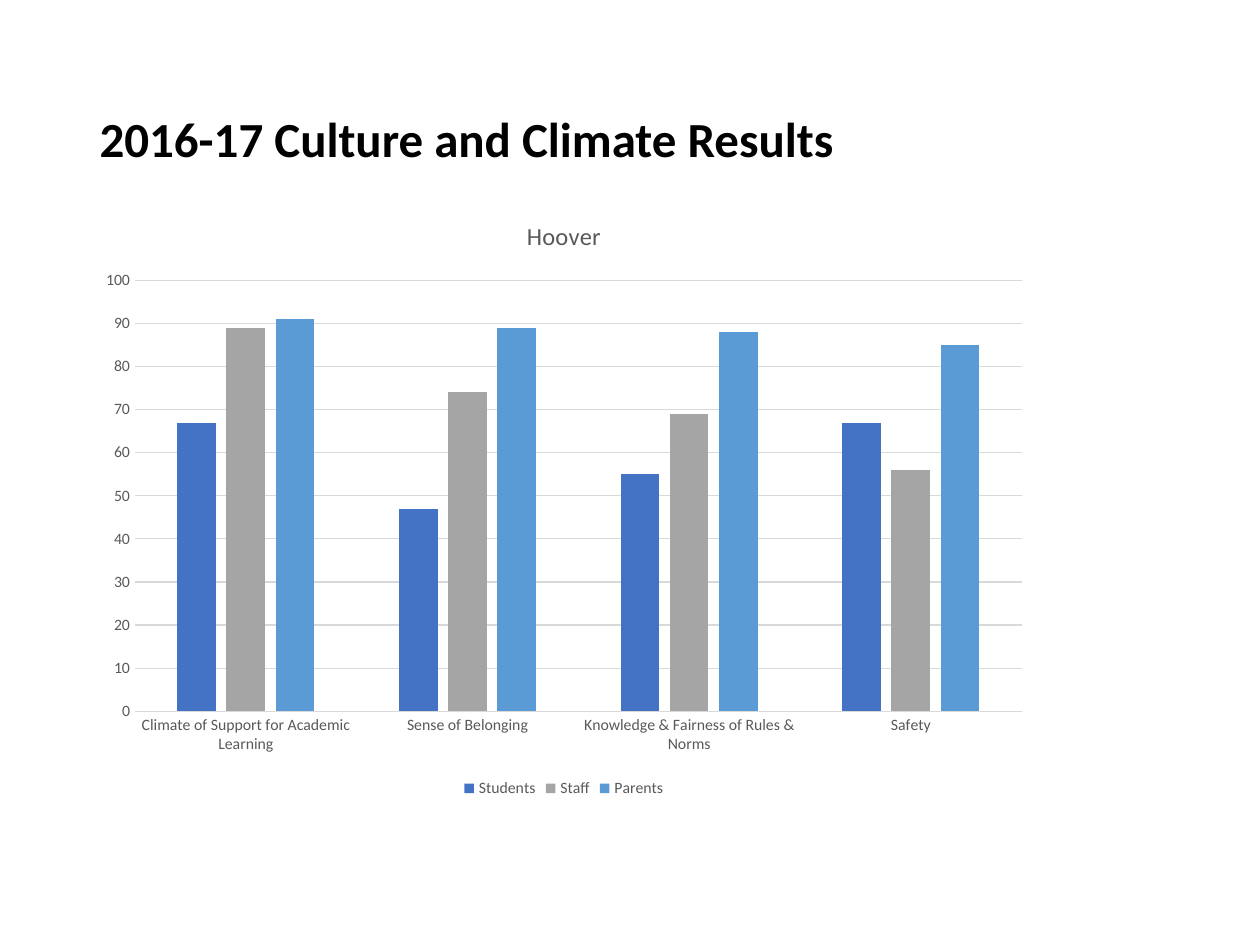
from pptx import Presentation
from pptx.chart.data import CategoryChartData
from pptx.dml.color import RGBColor
from pptx.enum.chart import XL_CHART_TYPE, XL_LEGEND_POSITION, XL_TICK_MARK
from pptx.enum.text import MSO_ANCHOR, PP_ALIGN
from pptx.util import Inches, Pt

FONT = "Calibri"
BLACK = RGBColor(0x00, 0x00, 0x00)
GRAY = RGBColor(0x59, 0x59, 0x59)
RULE = RGBColor(0xD9, 0xD9, 0xD9)

CATEGORIES = [
    "Climate of Support for Academic Learning",
    "Sense of Belonging",
    "Knowledge & Fairness of Rules & Norms",
    "Safety",
]
SERIES = [
    ("Students", (67, 47, 55, 67), RGBColor(0x44, 0x72, 0xC4)),
    ("Staff", (89, 74, 69, 56), RGBColor(0xA5, 0xA5, 0xA5)),
    ("Parents", (91, 89, 88, 85), RGBColor(0x5B, 0x9B, 0xD5)),
]


def format_font(font, size, color=GRAY, bold=False):
    font.name = FONT
    font.size = Pt(size)
    font.bold = bold
    font.color.rgb = color


def write_text(frame, text, size, color=GRAY, bold=False, **para_format):
    para = frame.paragraphs[0]
    for name, value in para_format.items():
        setattr(para, name, value)
    span = para.add_run()
    span.text = text
    format_font(span.font, size, color, bold)


def style_rule(line):
    line.color.rgb = RULE
    line.width = Pt(0.75)


def place_title(page, left, top, width, height):
    title = page.shapes.title
    title.left, title.top, title.width, title.height = left, top, width, height
    frame = title.text_frame
    frame.word_wrap = True
    frame.vertical_anchor = MSO_ANCHOR.MIDDLE
    write_text(frame, "2016-17 Culture and Climate Results", 28, color=BLACK,
               bold=True, alignment=PP_ALIGN.LEFT, line_spacing=0.9)


def place_results_chart(page, left, top, width, height):
    data = CategoryChartData()
    data.categories = CATEGORIES
    for name, values, _ in SERIES:
        data.add_series(name, values)
    chart = page.shapes.add_chart(
        XL_CHART_TYPE.COLUMN_CLUSTERED, left, top, width, height, data).chart
    format_font(chart.font, 10, BLACK)

    # Chart title
    chart.has_title = True
    write_text(chart.chart_title.text_frame, "Hoover", 14)
    chart.chart_title.include_in_layout = False

    # Columns
    plot = chart.plots[0]
    plot.gap_width = 219
    plot.overlap = -27
    plot.vary_by_categories = False
    for series, (_, _, color) in zip(plot.series, SERIES):
        series.format.fill.solid()
        series.format.fill.fore_color.rgb = color

    # Axes
    for axis in (chart.category_axis, chart.value_axis):
        axis.major_tick_mark = axis.minor_tick_mark = XL_TICK_MARK.NONE
        format_font(axis.tick_labels.font, 9)
    style_rule(chart.category_axis.format.line)
    value_axis = chart.value_axis
    value_axis.minimum_scale, value_axis.maximum_scale = 0, 100
    value_axis.major_unit = 10
    value_axis.format.line.fill.background()
    style_rule(value_axis.major_gridlines.format.line)

    # Legend
    chart.has_legend = True
    chart.legend.position = XL_LEGEND_POSITION.BOTTOM
    chart.legend.include_in_layout = False
    format_font(chart.legend.font, 9)


def main():
    deck = Presentation()
    deck.slide_width, deck.slide_height = Inches(10), Inches(7.5)
    page = deck.slides.add_slide(deck.slide_layouts.get_by_name("Title Only"))
    place_title(page, Inches(0.69), Inches(0.4), Inches(8.62), Inches(1.45))
    place_results_chart(page, Inches(0.69), Inches(1.55), Inches(7.57), Inches(4.82))
    deck.save("out.pptx")


if __name__ == "__main__":
    main()
